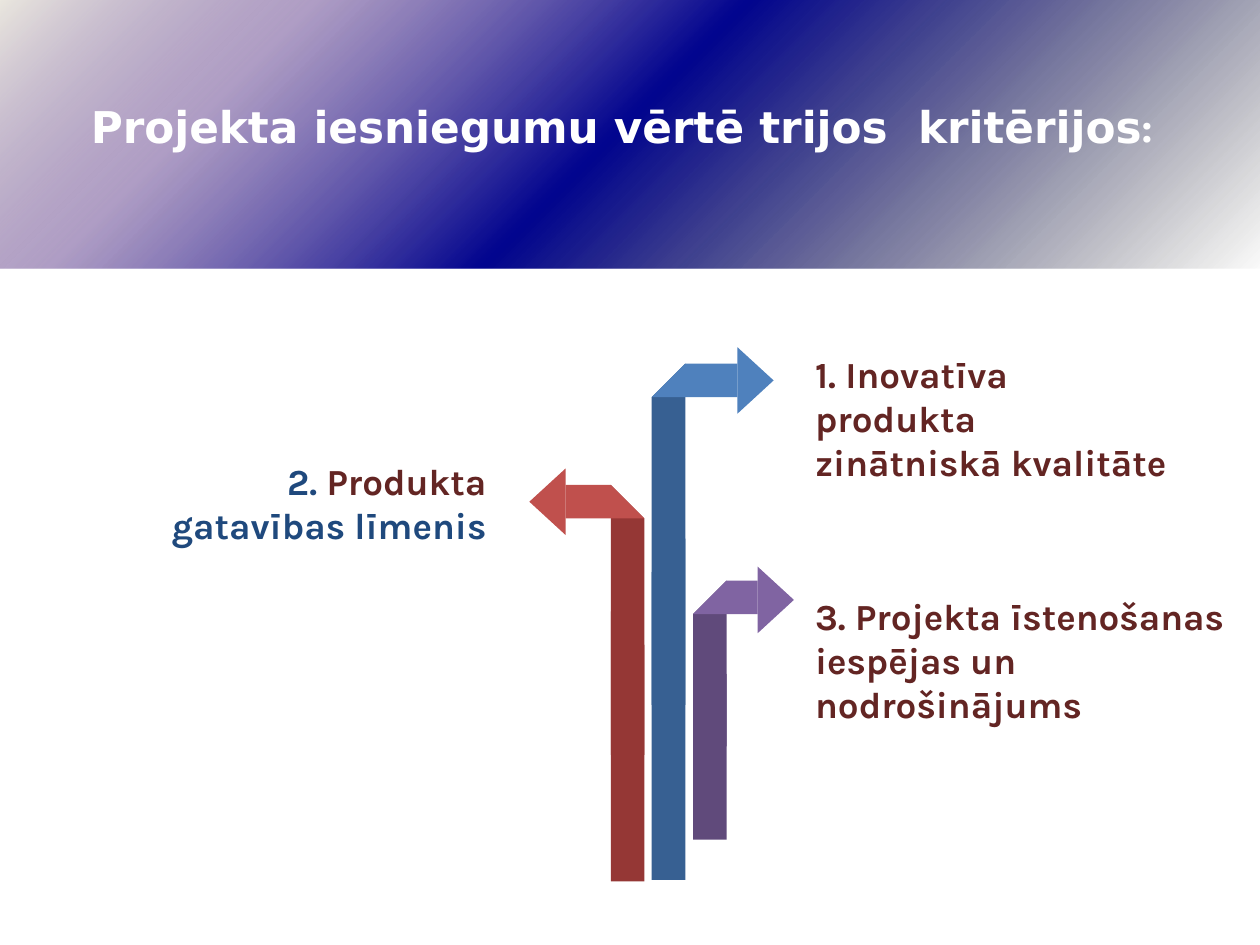
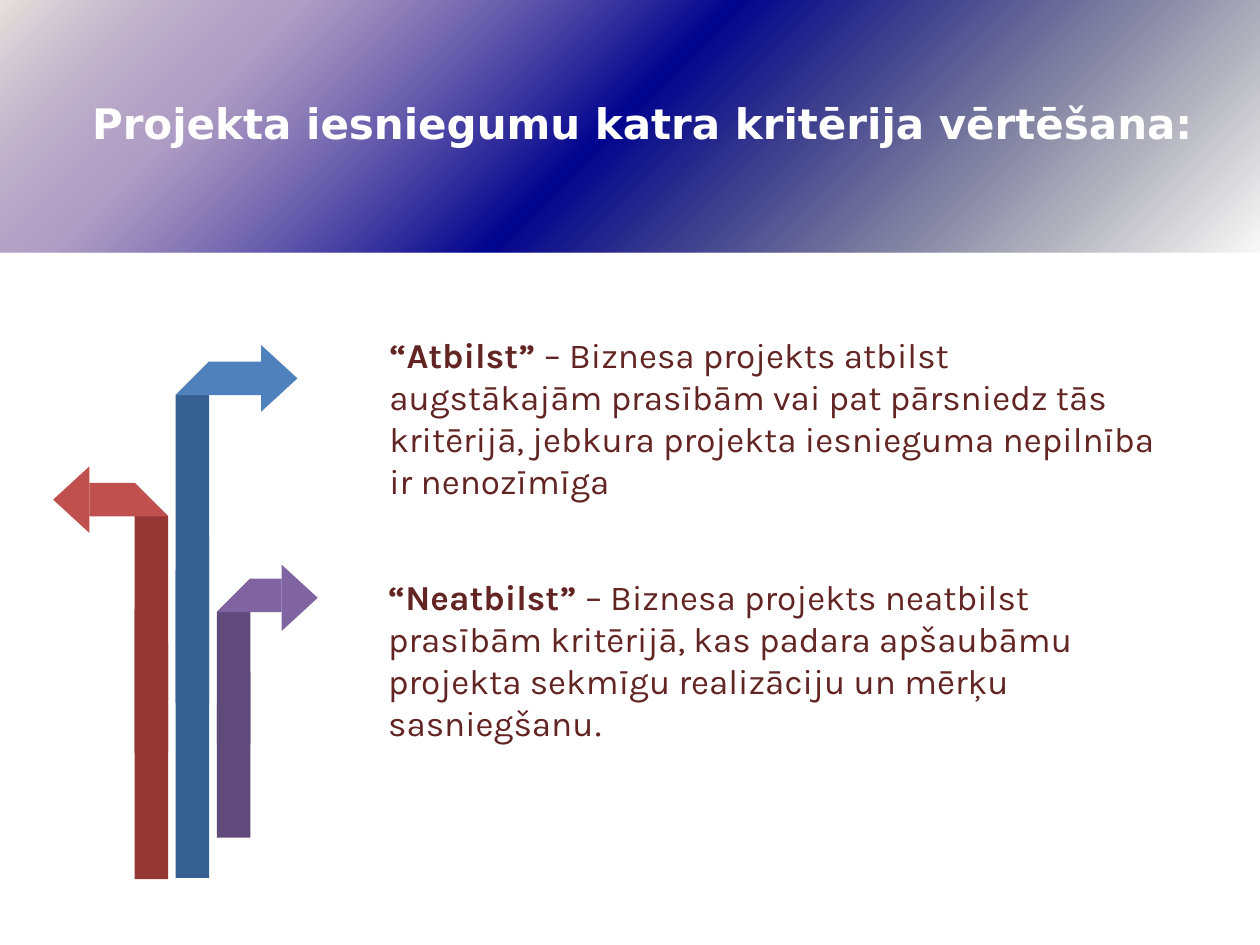
from lxml import etree
from pptx import Presentation
from pptx.dml.color import RGBColor
from pptx.enum.shapes import MSO_SHAPE
from pptx.enum.text import MSO_ANCHOR, MSO_AUTO_SIZE, PP_ALIGN
from pptx.oxml import parse_xml
from pptx.util import Pt

RECTANGLE = MSO_SHAPE.RECTANGLE
TOP = MSO_ANCHOR.TOP
FIXED, GROW = MSO_AUTO_SIZE.NONE, MSO_AUTO_SIZE.SHAPE_TO_FIT_TEXT
LEFT, RIGHT = PP_ALIGN.LEFT, PP_ALIGN.RIGHT

DRAWING = "http://schemas.openxmlformats.org/drawingml/2006/main"
TITLE_ONLY = 5
COLOURS = {
    "white": "FFFFFF", "maroon": "632523", "navy": "1F497D",
    "blue": "4F81BD", "dark blue": "376092",
    "red": "C0504D", "dark red": "953735",
    "purple": "8064A2", "dark purple": "604A7B",
}
BAND_STOPS = [(0, "EEECE1", 100), (21, "8064A2", 62), (49, "02058F", 100), (100, "000000", 0)]
STRIP, HEAD_LENGTH, HEAD_HALF = 19.2, 20.7, 19

SIGNPOST = [
    dict(colour="blue", side=1, x=0, y=0, piece=195, lower=100, ribbon=49, tip=9.6),
    dict(colour="red", side=-1, x=-4.2, y=69.3, piece=154.3, lower=72.2, ribbon=45, tip=9.6),
    dict(colour="purple", side=1, x=23.6, y=124, piece=94.7, lower=53.3, ribbon=37, tip=11),
]


class SlideBuilder:
    title_font, text_font = "DejaVu Sans", "Karla"

    def __init__(self, deck):
        self.deck = deck
        self.page = None

    def new_page(self):
        self.page = self.deck.slides.add_slide(self.deck.slide_layouts[TITLE_ONLY])

    def colour(self, name):
        return RGBColor.from_string(COLOURS[name])

    def band(self, left, top):
        band = self.page.shapes.add_shape(RECTANGLE, Pt(left), Pt(top), Pt(729.4), Pt(155.5))
        band.shadow.inherit = False
        band.line.fill.background()
        stops = "".join(
            f'<a:gs pos="{position * 1000}"><a:srgbClr val="{colour}">'
            f'<a:alpha val="{alpha * 1000}"/></a:srgbClr></a:gs>'
            for position, colour, alpha in BAND_STOPS)
        gradient = parse_xml(
            f'<a:gradFill xmlns:a="{DRAWING}" rotWithShape="1"><a:gsLst>{stops}</a:gsLst>'
            '<a:lin ang="2700000" scaled="0"/></a:gradFill>')
        outline = etree.QName(DRAWING, "prstGeom")
        band._element.spPr.find(outline).addnext(gradient)
        self.page.shapes._spTree.insert(2, band._element)

    def format_frame(self, frame, margins, fit):
        frame.word_wrap = True
        frame.auto_size = fit
        frame.vertical_anchor = TOP
        frame.margin_left, frame.margin_top, frame.margin_right, frame.margin_bottom = map(Pt, margins)

    def set_para(self, para, spans, size, font, colour, bold):
        para.font.size = Pt(size)
        para.font.name = font
        para.font.bold = bold
        para.font.color.rgb = self.colour(colour)
        for text, changes in spans:
            span = para.add_run()
            span.text = text
            if "colour" in changes:
                span.font.color.rgb = self.colour(changes["colour"])
            if "bold" in changes:
                span.font.bold = changes["bold"]
            if "font" in changes:
                span.font.name = changes["font"]

    def title(self, spans, left, top, width, height, size):
        title = self.page.shapes.title
        title.left, title.top, title.width, title.height = map(Pt, (left, top, width, height))
        self.format_frame(title.text_frame, (2.9, 2.9, 2.9, 2.9), FIXED)
        para = title.text_frame.paragraphs[0]
        para.alignment = LEFT
        para.line_spacing = 0.72
        self.set_para(para, spans, size, self.title_font, "white", True)

    def text(self, spans, left, top, width, height, size, align=LEFT, bold=None):
        box = self.page.shapes.add_textbox(Pt(left), Pt(top), Pt(width), Pt(height))
        self.format_frame(box.text_frame, (3.6, 3.6, 3.6, 2.2), GROW)
        para = box.text_frame.paragraphs[0]
        para.alignment = align
        self.set_para(para, spans, size, self.text_font, "maroon", bold)

    def polygon(self, group, points, colour):
        corners = [(Pt(x), Pt(y)) for x, y in points]
        builder = group.shapes.build_freeform(*corners[0], scale=1.0)
        builder.add_line_segments(corners[1:], close=True)
        shape = builder.convert_to_shape()
        shape.shadow.inherit = False
        shape.fill.solid()
        shape.fill.fore_color.rgb = self.colour(colour)
        shape.line.fill.background()

    def arrow(self, group, left, top, colour, side, x, y, piece, lower, ribbon, tip):
        def place(points):
            return [(left + x + side * across, top + y + down) for across, down in points]

        for start in (0, lower):
            post = [(STRIP, start), (STRIP, start + piece), (0, start + piece), (0, start + STRIP)]
            self.polygon(group, place(post), f"dark {colour}")
        fold = [(ribbon, STRIP), (0, STRIP), (STRIP, 0), (ribbon, 0)]
        head = [(ribbon + HEAD_LENGTH, tip), (ribbon, tip - HEAD_HALF), (ribbon, tip + HEAD_HALF)]
        for points in (fold, head):
            self.polygon(group, place(points), colour)

    def signpost(self, left, top):
        group = self.page.shapes.add_group_shape()
        for arrow in SIGNPOST:
            self.arrow(group, left, top, **arrow)


def criteria_page(builder):
    builder.new_page()
    builder.band(-4.7, -1.8)
    builder.title([("Projekta iesniegumu vērtē trijos  kritērijos", {}),
                   (":", {"font": builder.text_font})], 49, 61.9, 630, 43.2, 25)
    builder.signpost(372.4, 207.8)
    builder.text([("2. ", {"colour": "navy"}), ("Produkta", {}),
                  (" gatavības līmenis", {"colour": "navy"})],
                 77.8, 258.5, 203.8, 56.2, 21, RIGHT, True)
    for text, top, width in (
            ("1. Inovatīva produkta zinātniskā kvalitāte", 197.3, 208.8),
            ("3. Projekta īstenošanas iespējas un nodrošinājums", 335.5, 244.8)):
        builder.text([(text, {})], 462.2, top, width, 56.2, 21, bold=True)


def rating_page(builder):
    builder.new_page()
    builder.band(-2.5, -11.2)
    builder.title([("Projekta iesniegumu katra kritērija vērtēšana:", {})],
                  49.7, 60.5, 637.2, 36.7, 24)
    builder.signpost(100.3, 206.6)
    strong = {"bold": True}
    builder.text([("“Atbilst” ", strong),
                  ("– Biznesa projekts atbilst augstākajām prasībām vai pat pārsniedz tās "
                   "kritērijā, jebkura projekta iesnieguma nepilnība ir nenozīmīga", {})],
                 218.9, 187.2, 451.4, 78.5, 20)
    builder.text([("“Neatbilst” ", strong),
                  ("– Biznesa projekts neatbilst prasībām kritērijā, kas padara apšaubāmu "
                   "projekta sekmīgu realizāciju un mērķu sasniegšanu", {}),
                  (".", {"font": "Times New Roman"})],
                 218.2, 325.4, 451.4, 78.5, 20)


def main():
    deck = Presentation()
    deck.slide_width, deck.slide_height = Pt(720), Pt(540)
    builder = SlideBuilder(deck)
    criteria_page(builder)
    rating_page(builder)
    deck.save("out.pptx")


if __name__ == "__main__":
    main()
